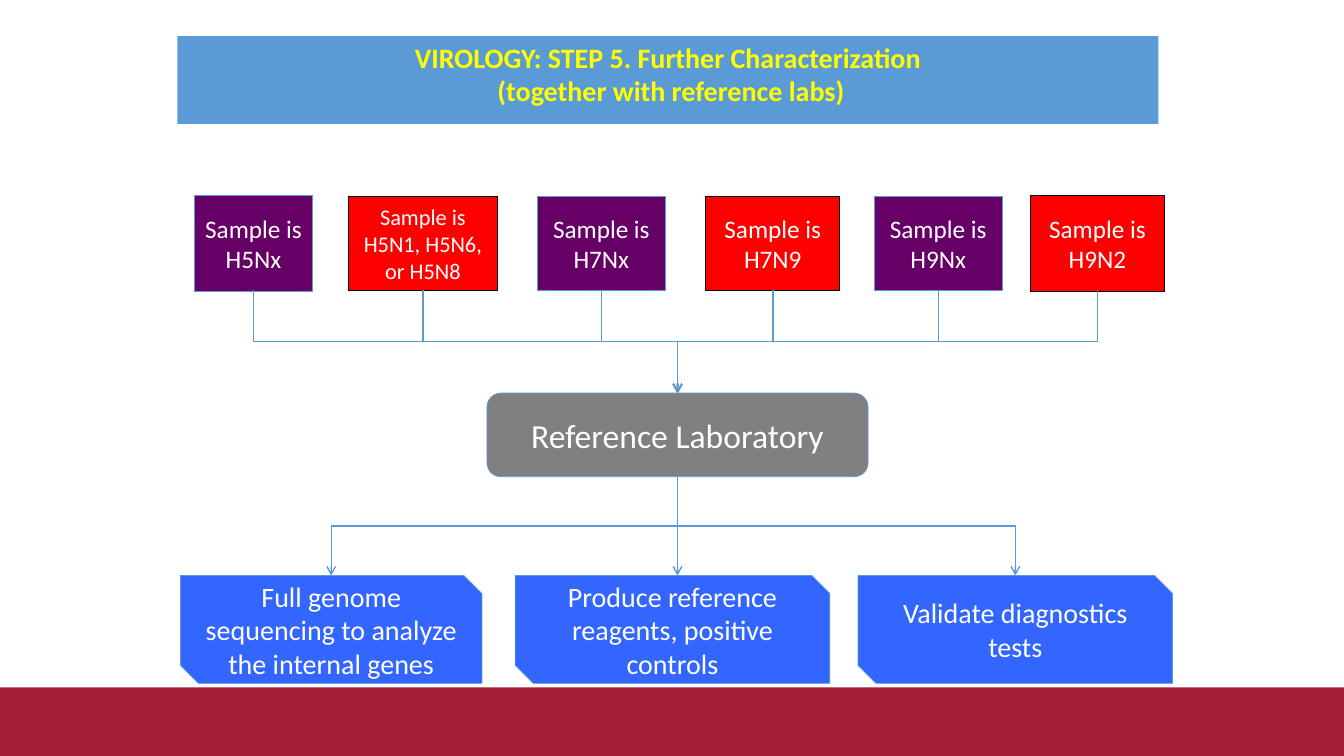
from lxml.etree import SubElement
from pptx import Presentation
from pptx.dml.color import RGBColor
from pptx.enum.shapes import MSO_CONNECTOR as Link, MSO_SHAPE as Preset
from pptx.enum.text import MSO_ANCHOR as Anchor, PP_ALIGN as Align
from pptx.oxml.ns import qn
from pptx.util import Inches, Pt

COLOURS = {
    "band": "A42036", "blue": "5B9BD5", "yellow": "FFFF00", "white": "FFFFFF",
    "black": "000000", "red": "FF0000", "purple": "660066", "grey": "808080",
    "royal": "3366FF",
}
SAMPLES = [
    ("Sample is H5Nx", 1.93, 1.94, 1.17, 0.95, "purple", 18),
    ("Sample is H5N1, H5N6, or H5N8", 3.46, 1.95, 1.47, 0.93, "red", 16),
    ("Sample is H7Nx", 5.33, 1.95, 1.27, 0.93, "purple", 18),
    ("Sample is H7N9", 7, 1.95, 1.33, 0.93, "red", 18),
    ("Sample is H9Nx", 8.67, 1.95, 1.27, 0.93, "purple", 18),
    ("Sample is H9N2", 10.22, 1.94, 1.33, 0.95, "red", 18),
]
TASKS = [
    ("Full genome sequencing to analyze the internal genes", 1.79, 2.99),
    ("Produce reference reagents, positive controls", 5.11, 3.12),
    ("Validate diagnostics tests", 8.51, 3.12),
]
LAB = {"left": 4.83, "top": 3.9, "width": 3.78, "height": 0.83}
TASK_TOP, TASK_HEIGHT = 5.71, 1.07
SAMPLE_BOTTOM = 2.88


def colour(name):
    """Return the named colour."""
    return RGBColor.from_string(COLOURS[name])


def apply(target, values):
    """Set attributes of an object from a dict."""
    for name, value in values.items():
        setattr(target, name, value)


def add_box(page, preset, left, top, width, height, fill, line=None):
    """Add a filled shape, outlined when a line colour is given."""
    box = page.shapes.add_shape(
        preset, Inches(left), Inches(top), Inches(width), Inches(height))
    box.shadow.inherit = False
    box.fill.solid()
    box.fill.fore_color.rgb = colour(fill)
    if line:
        box.line.color.rgb = colour(line)
        box.line.width = Pt(0.5)
    else:
        box.line.fill.background()
    return box


def write(box, lines, size, ink="white", bold=False, anchor=Anchor.MIDDLE):
    """Write centred paragraphs into a shape."""
    frame = box.text_frame
    apply(frame, {"word_wrap": True, "vertical_anchor": anchor})
    for index, line in enumerate(lines):
        para = frame.add_paragraph() if index else frame.paragraphs[0]
        para.alignment = Align.CENTER
        span = para.add_run()
        span.text = line
        apply(span.font, {"name": "Calibri", "size": Pt(size), "bold": bold})
        span.font.color.rgb = colour(ink)


def add_elbow(page, start_x, start_y, end_x, end_y):
    """Add an arrow that runs down, across and down again."""
    middle_x, middle_y = (start_x + end_x) / 2, (start_y + end_y) / 2
    half_drop, half_span = (end_y - start_y) / 2, abs(end_x - start_x) / 2
    leftward = end_x < start_x
    reach = half_drop if leftward else -half_drop
    arrow = page.shapes.add_connector(
        Link.ELBOW, Inches(middle_x - reach), Inches(middle_y - half_span),
        Inches(middle_x + reach), Inches(middle_y + half_span))
    arrow.line.color.rgb = colour("blue")
    arrow.line.width = Pt(1)
    properties = arrow._element.spPr
    properties.find(qn("a:xfrm")).set("rot", str((90 if leftward else 270) * 60000))
    SubElement(properties.find(qn("a:ln")), qn("a:tailEnd"), type="arrow")
    SubElement(properties, qn("a:effectLst"))


def main():
    """Build the slide and save it."""
    deck = Presentation()
    apply(deck, {"slide_width": Inches(13.33), "slide_height": Inches(7.5)})
    page = deck.slides.add_slide(deck.slide_layouts[6])

    add_box(page, Preset.RECTANGLE, 0, 6.82, 13.33, 0.68, "band")
    title = add_box(page, Preset.RECTANGLE, 1.76, 0.36, 9.73, 0.87, "blue")
    write(title, ["VIROLOGY: STEP 5. Further Characterization",
                  " (together with reference labs)"],
          20, "yellow", True, Anchor.TOP)
    apply(title.text_frame, {"margin_top": Inches(0.04), "margin_bottom": Inches(0.04),
                             "margin_left": Inches(0.09), "margin_right": Inches(0.09)})

    lab = add_box(page, Preset.ROUNDED_RECTANGLE, **LAB, fill="grey", line="blue")
    write(lab, ["Reference Laboratory"], 24)
    lab_x = LAB["left"] + LAB["width"] / 2
    lab_bottom = LAB["top"] + LAB["height"]

    for text, left, top, width, height, fill, size in SAMPLES:
        line = "black" if fill == "red" else "blue"
        sample = add_box(page, Preset.RECTANGLE, left, top, width, height, fill, line)
        write(sample, [text], size)
        add_elbow(page, left + width / 2, SAMPLE_BOTTOM, lab_x, LAB["top"])

    for index, (text, left, width) in enumerate(TASKS):
        task = add_box(page, Preset.SNIP_2_DIAG_RECTANGLE, left, TASK_TOP,
                       width, TASK_HEIGHT, "royal", "blue")
        write(task, [text], 20)
        end_x = lab_x if index == 1 else left + width / 2
        add_elbow(page, lab_x, lab_bottom, end_x, TASK_TOP)

    deck.save("out.pptx")


if __name__ == "__main__":
    main()
